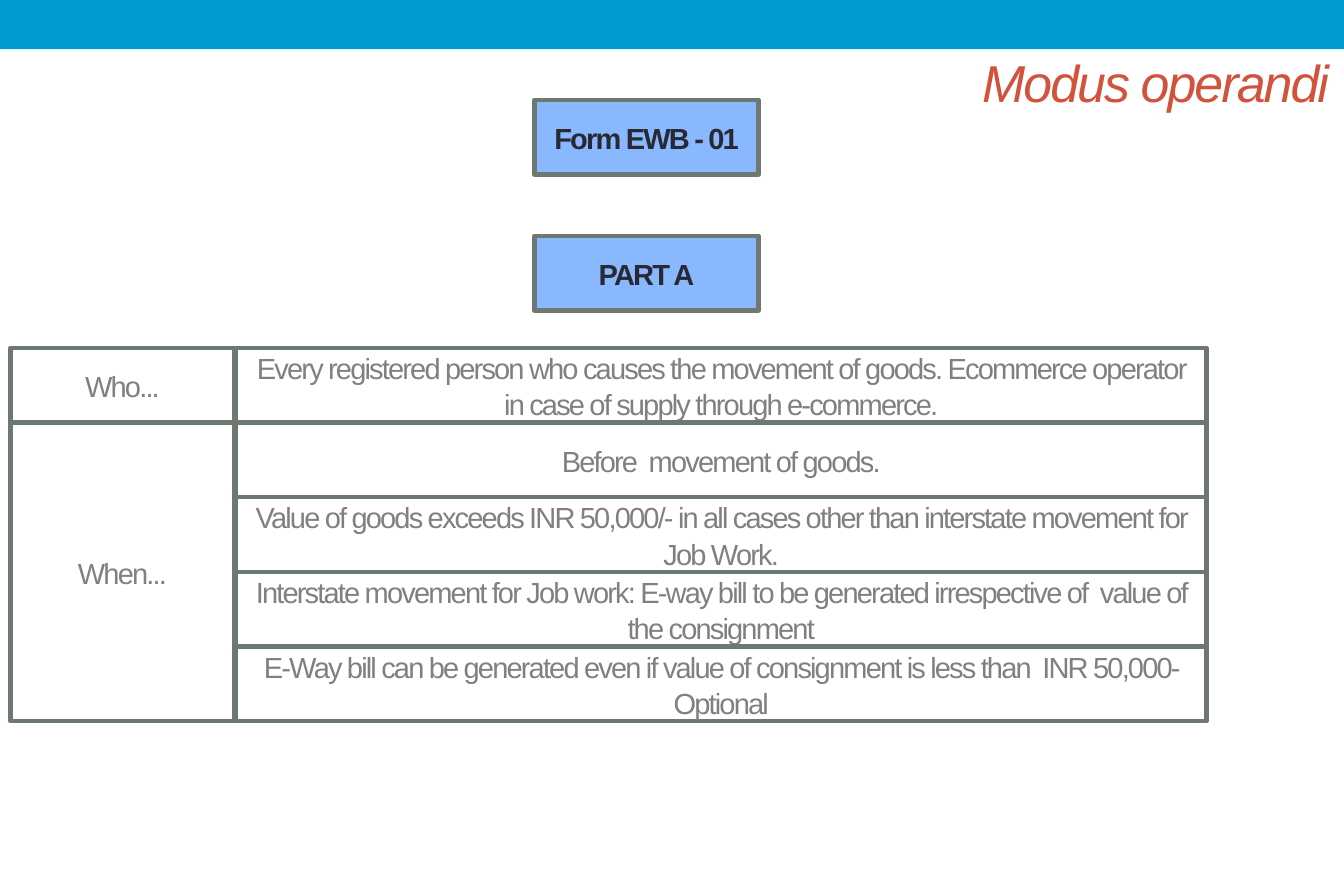
from lxml import etree
from pptx import Presentation
from pptx.dml.color import RGBColor
from pptx.enum.shapes import MSO_SHAPE as Shape
from pptx.enum.text import MSO_ANCHOR as Anchor, MSO_AUTO_SIZE as AutoSize, PP_ALIGN as Align
from pptx.oxml.ns import qn
from pptx.util import Inches, Pt

BAR_BLUE = RGBColor(0x00, 0x9B, 0xD2)
FORM_BLUE = RGBColor(0x00, 0x66, 0xFF)
OUTLINE = RGBColor(0x6D, 0x78, 0x71)
TITLE_RED = RGBColor(0xD2, 0x53, 0x3C)
DARK = RGBColor(0x29, 0x29, 0x34)
GREY = RGBColor(0x80, 0x80, 0x80)

ROW_HEIGHT = 0.5
LABEL_WIDTH = 1.5
RULE_WIDTH = 6.5
COLUMN_GAP = 0.01

RULES = [
    ("Who...", [
        "Every registered person who causes the movement of goods. "
        "Ecommerce operator in case of supply through e-commerce.",
    ]),
    ("When...", [
        "Before  movement of goods.",
        "Value of goods exceeds INR 50,000/- in all cases other than "
        "interstate movement for Job Work.",
        "Interstate movement for Job work: E-way bill to be generated "
        "irrespective of  value of the consignment",
        "E-Way bill can be generated even if value of consignment is less "
        "than  INR 50,000- Optional",
    ]),
]


def write(frame, text, size, color, align):
    """Fill the frame with one paragraph of tightly spaced Arial."""
    frame.word_wrap = True
    paragraph = frame.paragraphs[0]
    paragraph.alignment = align
    paragraph.line_spacing = 1.05
    run = paragraph.add_run()
    run.text = text
    run._r.get_or_add_rPr().set("spc", "-90")
    font = paragraph.font
    font.name = "Arial"
    font.size = Pt(size)
    font.color.rgb = color
    return font


def add_box(slide, left, top, width, height):
    box = slide.shapes.add_shape(
        Shape.RECTANGLE, Inches(left), Inches(top), Inches(width), Inches(height))
    box.shadow.inherit = False
    return box


def add_bar(slide, left, top, width, height):
    bar = add_box(slide, left, top, width, height)
    bar.fill.solid()
    bar.fill.fore_color.rgb = BAR_BLUE
    bar.line.fill.background()


def add_title(slide, left, top, width, height):
    title = slide.shapes.title
    title.left, title.top = Inches(left), Inches(top)
    title.width, title.height = Inches(width), Inches(height)
    frame = title.text_frame
    frame.auto_size = AutoSize.NONE
    frame.vertical_anchor = Anchor.TOP
    frame.margin_top = Inches(0.07)
    write(frame, "Modus operandi", 25, TITLE_RED, Align.RIGHT).italic = True


def add_outlined_box(slide, left, top, width, height, text, color=GREY):
    box = add_box(slide, left, top, width, height)
    box.fill.background()
    box.line.color.rgb = OUTLINE
    box.line.width = Pt(2.08)
    frame = box.text_frame
    frame.vertical_anchor = Anchor.MIDDLE
    frame.margin_top = frame.margin_bottom = 0
    font = write(frame, text, 14, color, Align.CENTER)
    return box, font


def add_form_box(slide, left, top, text):
    """Add a bold heading box with a see-through blue fill."""
    box, font = add_outlined_box(slide, left, top, LABEL_WIDTH, ROW_HEIGHT, text, DARK)
    font.bold = True
    box.fill.solid()
    box.fill.fore_color.rgb = FORM_BLUE
    tint = box.fill._xPr.find(qn("a:solidFill"))[0]
    etree.SubElement(tint, qn("a:alpha")).set("val", "46000")


def add_rules(slide, left, top):
    """Stack the rules, each label as tall as the rules beside it."""
    rule_left = left + LABEL_WIDTH + COLUMN_GAP
    for label, rules in RULES:
        height = ROW_HEIGHT * len(rules)
        add_outlined_box(slide, left, top, LABEL_WIDTH, height, label)
        for row, rule in enumerate(rules):
            add_outlined_box(slide, rule_left, top + row * ROW_HEIGHT,
                             RULE_WIDTH, ROW_HEIGHT, rule)
        top += height


def main():
    deck = Presentation()
    deck.slide_width, deck.slide_height = Inches(9), Inches(6)
    slide = deck.slides.add_slide(deck.slide_layouts[5])
    add_bar(slide, 0, 0, 9, 0.33)
    add_title(slide, 0.9, 0.25, 8.1, 0.45)
    add_form_box(slide, 3.58, 0.67, "Form EWB - 01")
    add_form_box(slide, 3.58, 1.58, "PART A")
    add_rules(slide, 0.07, 2.33)
    deck.save("out.pptx")


if __name__ == "__main__":
    main()
